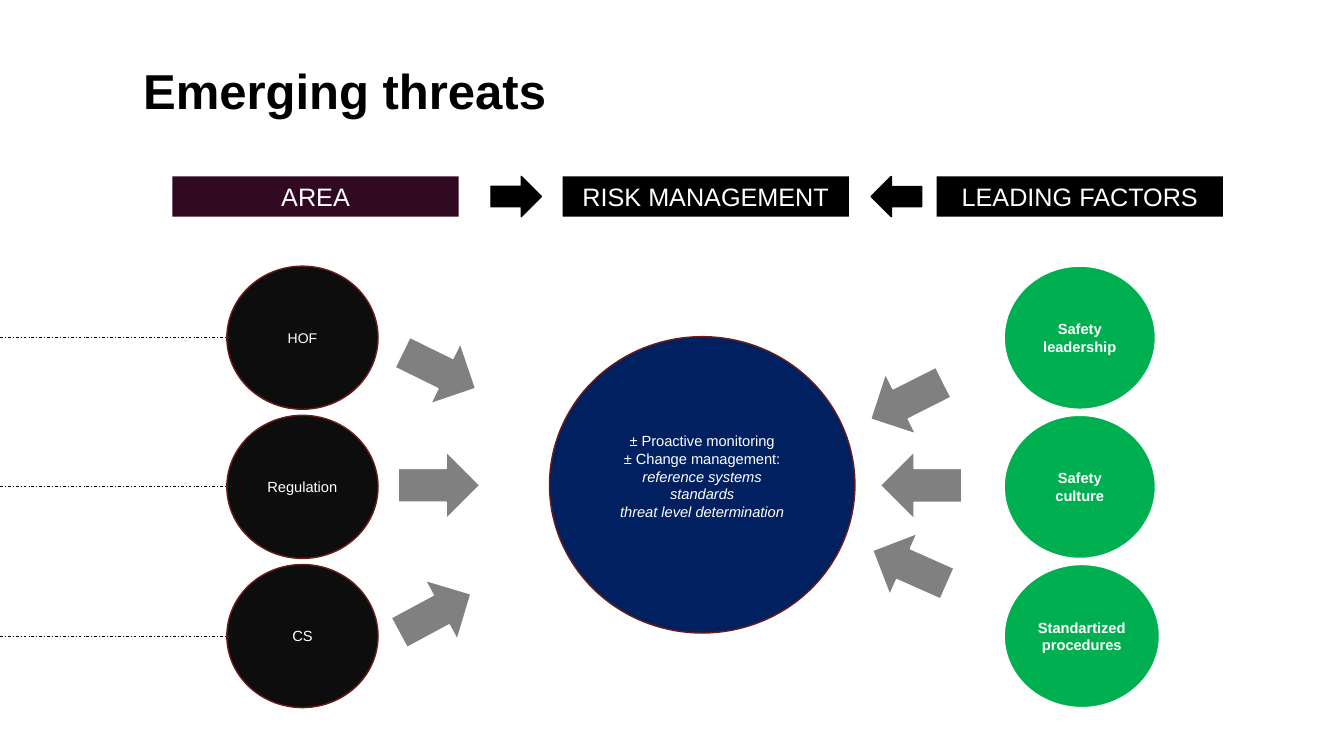
"""Build the slide on emerging threats, risk management and leading factors."""
import pptx
import pptx.dml.color
import pptx.enum.dml
import pptx.enum.shapes
import pptx.enum.text
import pptx.util
from lxml import etree

Inches = pptx.util.Inches
Shapes = pptx.enum.shapes.MSO_SHAPE
Align = pptx.enum.text.PP_ALIGN
Anchor = pptx.enum.text.MSO_ANCHOR

COLOURS = {
    "black": "000000",
    "white": "FFFFFF",
    "plum": "310922",
    "charcoal": "0D0D0D",
    "maroon": "6D1D19",
    "navy": "002060",
    "grey": "808080",
    "green": "00B050",
}
HEADER_FONT = {"size": pptx.util.Pt(18)}
CIRCLE_FONT = {"size": pptx.util.Pt(10.5)}
SMALL_FONT = {"size": pptx.util.Pt(10)}
BOLD_FONT = {**CIRCLE_FONT, "bold": True}
ITALIC_FONT = {**CIRCLE_FONT, "italic": True}
TITLE_FONT = {"size": pptx.util.Pt(35), "bold": True}
ROW_PITCH = 1.48
ARROW_SIZE = (0.81, 0.67)


def colour(name):
    """Return the named colour."""
    return pptx.dml.color.RGBColor.from_string(COLOURS[name])


def set_values(target, values):
    """Set each attribute of the target from a dict."""
    for name, value in values.items():
        setattr(target, name, value)


def write_lines(shape, lines, text_colour="white", alignment=Align.CENTER):
    """Write (text, font values) pairs as paragraphs of a shape."""
    frame = shape.text_frame
    frame.word_wrap = True
    for index, (text, font_values) in enumerate(lines):
        paragraph = frame.add_paragraph() if index else frame.paragraphs[0]
        paragraph.text = text
        paragraph.alignment = alignment
        set_values(paragraph.font, {"name": "Arial", **font_values})
        paragraph.font.color.rgb = colour(text_colour)


def add_figure(slide, preset, box, fill, line=None, rotation=0):
    """Add a filled preset shape in a box, with an optional outline."""
    shape = slide.shapes.add_shape(preset, *map(Inches, box))
    shape.shadow.inherit = False
    shape.rotation = rotation
    shape.fill.solid()
    shape.fill.fore_color.rgb = colour(fill)
    if line:
        shape.line.color.rgb = colour(line)
        shape.line.width = pptx.util.Pt(1)
    else:
        shape.line.fill.background()
    return shape


def add_title(slide, box):
    """Place and format the title."""
    title = slide.shapes.title
    set_values(title, dict(zip(("left", "top", "width", "height"), map(Inches, box))))
    write_lines(title, [("Emerging threats", TITLE_FONT)], "black", Align.LEFT)
    set_values(title.text_frame, {
        "vertical_anchor": Anchor.TOP,
        "auto_size": pptx.enum.text.MSO_AUTO_SIZE.NONE,
    })
    title.text_frame.paragraphs[0].line_spacing = 0.9


def add_headers(slide, box):
    """Add the three headings and the arrows pointing to the middle one."""
    left, top, width, height = box
    headings = [
        ("AREA", 0, "plum"),
        ("RISK MANAGEMENT", 3.87, "black"),
        ("LEADING FACTORS", 7.58, "black"),
    ]
    for text, offset, fill in headings:
        heading = add_figure(slide, Shapes.RECTANGLE, (left + offset, top, width, height), fill)
        write_lines(heading, [(text, HEADER_FONT)])
    for offset, rotation in [(3.16, 0), (6.93, 180)]:
        arrow_box = (left + offset, top, 0.5, height)
        add_figure(slide, Shapes.RIGHT_ARROW, arrow_box, "black", "black", rotation)


def add_circles(slide, box, fill, line, entries):
    """Add a column of labelled circles from the box of the first one."""
    left, top, width, height = box
    for row, (text, font_values, extra_width) in enumerate(entries):
        circle_box = (left, top + row * ROW_PITCH, width + extra_width, height)
        circle = add_figure(slide, Shapes.FLOWCHART_CONNECTOR, circle_box, fill, line)
        write_lines(circle, [(text, font_values)])


def add_dashed_lines(slide, box):
    """Add a dash-dot line per row along the top of the box."""
    left, top, width = box
    for row in range(3):
        height = Inches(top + row * ROW_PITCH)
        line = slide.shapes.add_connector(
            pptx.enum.shapes.MSO_CONNECTOR.STRAIGHT,
            Inches(left), height, Inches(left + width), height)
        line.line.color.rgb = colour("black")
        line.line.width = pptx.util.Pt(0.5)
        line.line.dash_style = pptx.enum.dml.MSO_LINE.DASH_DOT
        properties = line._element.spPr
        etree.SubElement(properties, pptx.oxml.ns.qn("a:effectLst"))


def add_hub(slide, box):
    """Add the central risk management circle."""
    hub = add_figure(slide, Shapes.FLOWCHART_CONNECTOR, box, "navy", "maroon")
    write_lines(hub, [
        ("± Proactive monitoring", CIRCLE_FONT),
        ("± Change management:", CIRCLE_FONT),
        ("reference systems", ITALIC_FONT),
        ("standards", ITALIC_FONT),
        ("threat level determination", ITALIC_FONT),
    ])
    hub.text_frame.margin_bottom = Inches(0.22)


def add_arrows(slide, origin, arrows):
    """Add grey arrows at (left, top, rotation) offsets from an origin."""
    left, top = origin
    for across, down, rotation in arrows:
        arrow_box = (left + across, top + down, *ARROW_SIZE)
        add_figure(slide, Shapes.RIGHT_ARROW, arrow_box, "grey", "white", rotation)


def main():
    """Build and save the presentation."""
    presentation = pptx.Presentation()
    presentation.slide_width = Inches(13.33)
    presentation.slide_height = Inches(7.5)
    slide = presentation.slides.add_slide(presentation.slide_layouts[5])
    add_title(slide, (1.32, 0.62, 10.7, 0.91))
    add_headers(slide, (1.71, 1.75, 2.84, 0.4))
    add_dashed_lines(slide, (0, 3.35, 2.25))
    add_circles(slide, (2.25, 2.64, 1.5, 1.42), "charcoal", "maroon", [
        ("HOF", SMALL_FONT, 0),
        ("Regulation", CIRCLE_FONT, 0),
        ("CS", CIRCLE_FONT, 0),
    ])
    add_hub(slide, (5.45, 3.34, 3.03, 2.94))
    add_arrows(slide, (3.95, 3.34), [(0, 0, 26.2), (0, 1.14, 0), (-0.04, 2.41, 331.7)])
    add_arrows(slide, (8.59, 3.64), [(0, 0, 153.2), (0.14, 0.84, 180), (0.03, 1.65, 204)])
    add_circles(slide, (9.96, 2.64, 1.5, 1.42), "green", "white", [
        ("Safety leadership", BOLD_FONT, 0),
        ("Safety culture", BOLD_FONT, 0),
        ("Standartized procedures", BOLD_FONT, 0.04),
    ])
    presentation.save("out.pptx")


if __name__ == "__main__":
    main()
